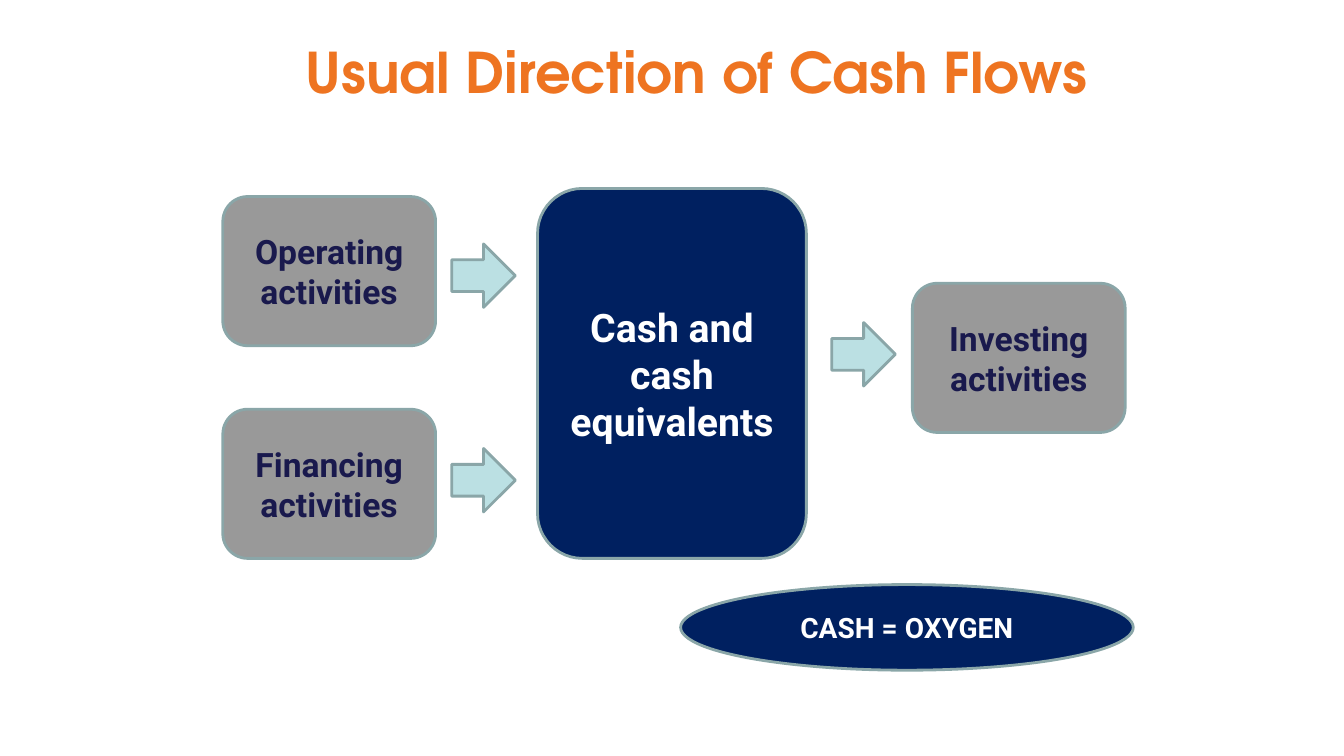
"""Builds a slide showing the usual direction of cash flows."""
import pptx
import pptx.dml.color
import pptx.enum.shapes
import pptx.enum.text
import pptx.util
from dataclasses import dataclass

SHAPES = pptx.enum.shapes.MSO_SHAPE


@dataclass(frozen=True)
class Theme:
    """Colours, fonts and type sizes of the slide."""
    orange: str = "EE7421"
    navy: str = "002060"
    grey: str = "999999"
    aqua: str = "BBE0E3"
    outline: str = "8AA6A8"
    ink: str = "19194D"
    white: str = "FFFFFF"
    heading_font: str = "TeX Gyre Adventor"
    body_font: str = "Roboto"
    heading: int = 40
    reserve: int = 28
    activity: int = 24
    motto: int = 20
    outline_width: int = 2


class FlowSlide:
    """Draws styled elements placed by percentages of the slide's size."""

    def __init__(self, deck, theme):
        """Adds a title-only slide to the deck."""
        self.deck, self.theme = deck, theme
        self.slide = deck.slides.add_slide(deck.slide_layouts[5])

    def place(self, left, top, width, height):
        """Turns percentages into slide lengths."""
        across, down = self.deck.slide_width, self.deck.slide_height
        return [round(share * full / 100) for share, full in
                zip((left, top, width, height), (across, down, across, down))]

    def set_wording(self, frame, wording, font, size, colour):
        """Sets one bold, centred paragraph."""
        layout = {"text": wording, "word_wrap": True,
                  "auto_size": pptx.enum.text.MSO_AUTO_SIZE.NONE,
                  "vertical_anchor": pptx.enum.text.MSO_ANCHOR.MIDDLE}
        for key, value in layout.items():
            setattr(frame, key, value)
        line = frame.paragraphs[0]
        line.alignment = pptx.enum.text.PP_ALIGN.CENTER
        letters = line.runs[0].font
        for key, value in {"name": font, "size": pptx.util.Pt(size), "bold": True}.items():
            setattr(letters, key, value)
        letters.color.rgb = pptx.dml.color.RGBColor.from_string(colour)

    def title(self, wording, area):
        """Moves and fills the title placeholder."""
        heading = self.slide.shapes.title
        for key, value in zip(("left", "top", "width", "height"), self.place(*area)):
            setattr(heading, key, value)
        for side in ("left", "top", "right", "bottom"):
            setattr(heading.text_frame, f"margin_{side}", 0)
        self.set_wording(heading.text_frame, wording, self.theme.heading_font,
                         self.theme.heading, self.theme.orange)

    def figure(self, outline, area, fill):
        """Adds an outlined preset shape."""
        figure = self.slide.shapes.add_shape(outline, *self.place(*area))
        figure.shadow.inherit = False
        figure.fill.solid()
        figure.fill.fore_color.rgb = pptx.dml.color.RGBColor.from_string(fill)
        figure.line.color.rgb = pptx.dml.color.RGBColor.from_string(self.theme.outline)
        figure.line.width = pptx.util.Pt(self.theme.outline_width)
        return figure

    def label(self, outline, wording, area, fill, size, colour):
        """Adds a preset shape with wording."""
        figure = self.figure(outline, area, fill)
        self.set_wording(figure.text_frame, wording, self.theme.body_font, size, colour)

    def activity(self, wording, left, top):
        """Adds a grey activity box."""
        self.label(SHAPES.ROUNDED_RECTANGLE, wording, (left, top, 15.83, 19.73),
                   self.theme.grey, self.theme.activity, self.theme.ink)

    def arrow(self, left, top):
        """Adds a block arrow pointing right."""
        self.figure(SHAPES.RIGHT_ARROW, (left, top, 4.73, 8.4), self.theme.aqua)


def main():
    """Builds and saves the deck."""
    deck = pptx.Presentation()
    deck.slide_width, deck.slide_height = pptx.util.Inches(13.33), pptx.util.Inches(7.5)
    theme = Theme()
    flow = FlowSlide(deck, theme)
    flow.title("Usual Direction of Cash Flows", (9.38, 0, 84.85, 18.93))
    flow.label(SHAPES.ROUNDED_RECTANGLE, "Cash and cash equivalents",
               (40, 24.93, 20, 48.93), theme.navy, theme.reserve, theme.white)
    activities = (("Operating activities", 16.58, 26),
                  ("Financing activities", 16.58, 54.13),
                  ("Investing activities", 67.89, 37.47))
    for wording, left, top in activities:
        flow.activity(wording, left, top)
    for left, top in ((33.61, 32.27), (33.61, 59.33), (61.89, 42.67)):
        flow.arrow(left, top)
    flow.label(SHAPES.OVAL, "CASH = OXYGEN", (50.64, 77.33, 33.68, 11.33),
               theme.navy, theme.motto, theme.white)
    deck.save("out.pptx")


if __name__ == "__main__":
    main()
